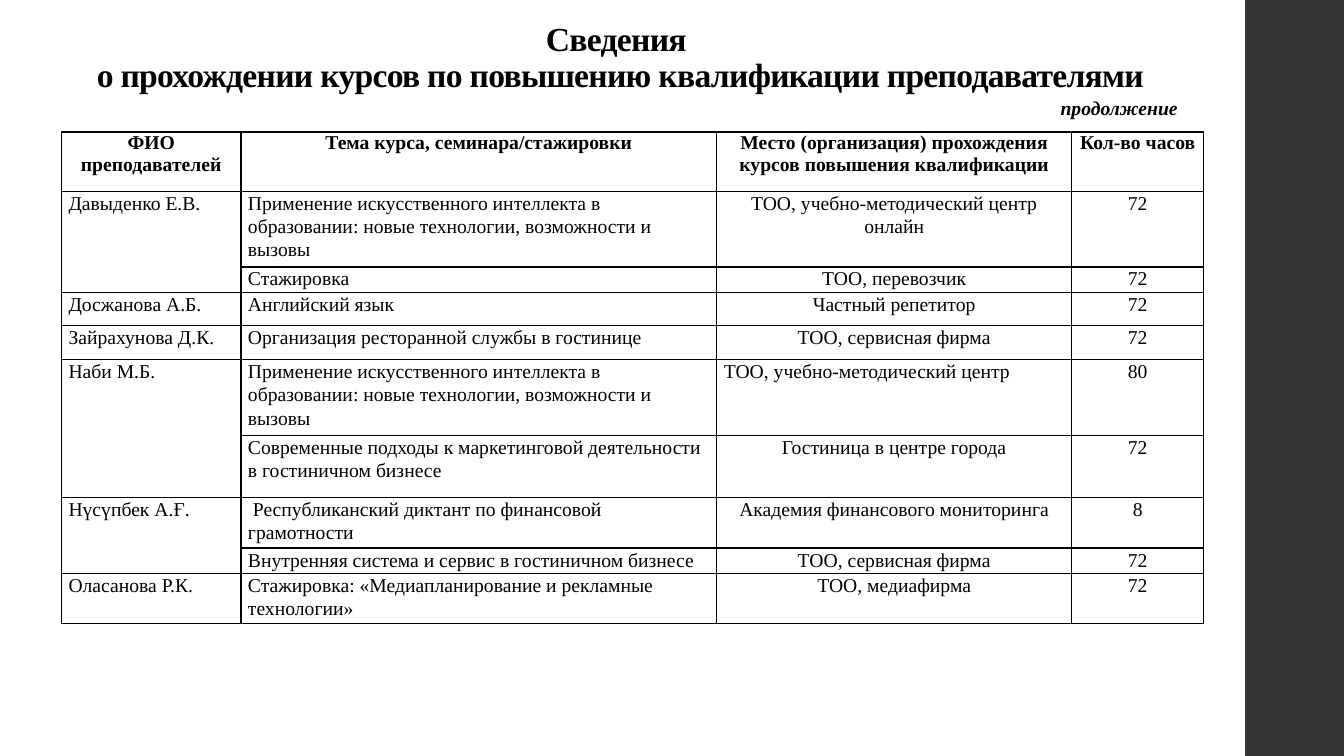
from pptx import Presentation
from pptx.dml.color import RGBColor
from pptx.enum.shapes import MSO_SHAPE
from pptx.enum.text import MSO_ANCHOR, MSO_AUTO_SIZE, PP_ALIGN
from pptx.oxml import parse_xml
from pptx.oxml.ns import nsdecls
from pptx.util import Inches, Pt

BLACK = RGBColor(0x00, 0x00, 0x00)
CHARCOAL = RGBColor(0x35, 0x35, 0x37)
FONT = "Times New Roman"
LEFT, CENTER = PP_ALIGN.LEFT, PP_ALIGN.CENTER

METHOD_CENTER = "ТОО, учебно-методический центр"
SERVICE = "ТОО, сервисная фирма"
AI_COURSE = "Применение искусственного интеллекта в образовании: новые технологии, возможности и вызовы"

HEADINGS = (
    "ФИО преподавателей",
    "Тема курса, семинара/стажировки",
    "Место (организация) прохождения курсов повышения квалификации",
    "Кол-во часов",
)
COURSES = [
    ("Давыденко Е.В.", AI_COURSE, METHOD_CENTER + " онлайн", "72"),
    ("", "Стажировка", "ТОО, перевозчик", "72"),
    ("Досжанова А.Б.", "Английский язык", "Частный репетитор", "72"),
    ("Зайрахунова Д.К.", "Организация ресторанной службы в гостинице", SERVICE, "72"),
    ("Наби М.Б.", AI_COURSE, METHOD_CENTER, "80"),
    ("", "Современные подходы к маркетинговой деятельности в гостиничном бизнесе",
     "Гостиница в центре города", "72"),
    ("Нүсүпбек А.Ғ.", " Республиканский диктант по финансовой грамотности",
     "Академия финансового мониторинга", "8"),
    ("", "Внутренняя система и сервис в гостиничном бизнесе", SERVICE, "72"),
    ("Оласанова Р.К.", "Стажировка: «Медиапланирование и рекламные технологии»",
     "ТОО, медиафирма", "72"),
]
COLUMN_WIDTHS = (1.78, 4.72, 3.52, 1.31)
ROW_HEIGHTS = (0.59, 0.74, 0.25, 0.33, 0.34, 0.74, 0.62, 0.5, 0.25, 0.5)


def apply_format(target, values):
    for attribute, value in values.items():
        setattr(target, attribute, value)


def format_text(paragraph, size, bold, italic, **layout):
    apply_format(paragraph, layout)
    apply_format(paragraph.font, {"name": FONT, "size": Pt(size), "bold": bold, "italic": italic})
    paragraph.font.color.rgb = BLACK
    for run in paragraph.runs:
        apply_format(run.font, {"name": FONT, "size": Pt(size), "bold": bold, "italic": italic})
        run.font.color.rgb = BLACK


presentation = Presentation()
presentation.slide_width = Inches(13.33)
presentation.slide_height = Inches(7.5)
slide = presentation.slides.add_slide(presentation.slide_layouts[5])

sidebar = slide.shapes.add_shape(
    MSO_SHAPE.RECTANGLE, Inches(12.35), Inches(0), Inches(0.98), Inches(7.5))
sidebar.shadow.inherit = False
sidebar.fill.solid()
sidebar.fill.fore_color.rgb = CHARCOAL
sidebar.line.fill.background()

title = slide.shapes.title
apply_format(title, {"left": Inches(0.76), "top": Inches(0.17),
                     "width": Inches(10.78), "height": Inches(0.82)})
title.text_frame.text = "Сведения \vо прохождении курсов по повышению квалификации преподавателями"
apply_format(title.text_frame, {"auto_size": MSO_AUTO_SIZE.NONE, "word_wrap": True,
                                "vertical_anchor": MSO_ANCHOR.BOTTOM})
format_text(title.text_frame.paragraphs[0], 24, True, False, alignment=CENTER, line_spacing=0.9)
for run in title.text_frame.paragraphs[0].runs:
    run.font._element.set("spc", "-50")

continuation = slide.shapes.add_textbox(Inches(10.42), Inches(0.9), Inches(1.52), Inches(0.34))
continuation.text_frame.word_wrap = True
continuation.text_frame.text = "продолжение"
format_text(continuation.text_frame.paragraphs[0], 14, True, True)

courses_table = slide.shapes.add_table(
    len(ROW_HEIGHTS), len(COLUMN_WIDTHS), Inches(0.61), Inches(1.31),
    Inches(sum(COLUMN_WIDTHS)), Inches(sum(ROW_HEIGHTS))).table
apply_format(courses_table, {"first_row": False, "horz_banding": False})
for column, width in zip(courses_table.columns, COLUMN_WIDTHS):
    column.width = Inches(width)
for row, height in zip(courses_table.rows, ROW_HEIGHTS):
    row.height = Inches(height)

for row_index, entries in enumerate([HEADINGS] + COURSES):
    is_heading = row_index == 0
    side_margin = Inches(0.02 if is_heading else 0.07)
    for column_index, entry in enumerate(entries):
        cell = courses_table.cell(row_index, column_index)
        cell.text = entry
        apply_format(cell, {"margin_left": side_margin, "margin_right": side_margin,
                            "margin_top": 0, "margin_bottom": 0})
        for side in ("lnL", "lnR", "lnT", "lnB"):
            cell._tc.get_or_add_tcPr().append(parse_xml(
                f'<a:{side} {nsdecls("a")} w="12700"><a:solidFill>'
                f'<a:srgbClr val="{BLACK}"/></a:solidFill></a:{side}>'))
        cell.fill.background()
        left_aligned = not is_heading and (
            column_index < 2 or entry == METHOD_CENTER)
        format_text(cell.text_frame.paragraphs[0], 14, is_heading, False,
                    alignment=LEFT if left_aligned else CENTER,
                    line_spacing=1.0 if is_heading else 1.07,
                    space_after=Pt(0 if is_heading else 8))

for row_index, (teacher, *_) in enumerate(COURSES, start=1):
    if not teacher:
        courses_table.cell(row_index - 1, 0).merge(courses_table.cell(row_index, 0))

presentation.save("out.pptx")
